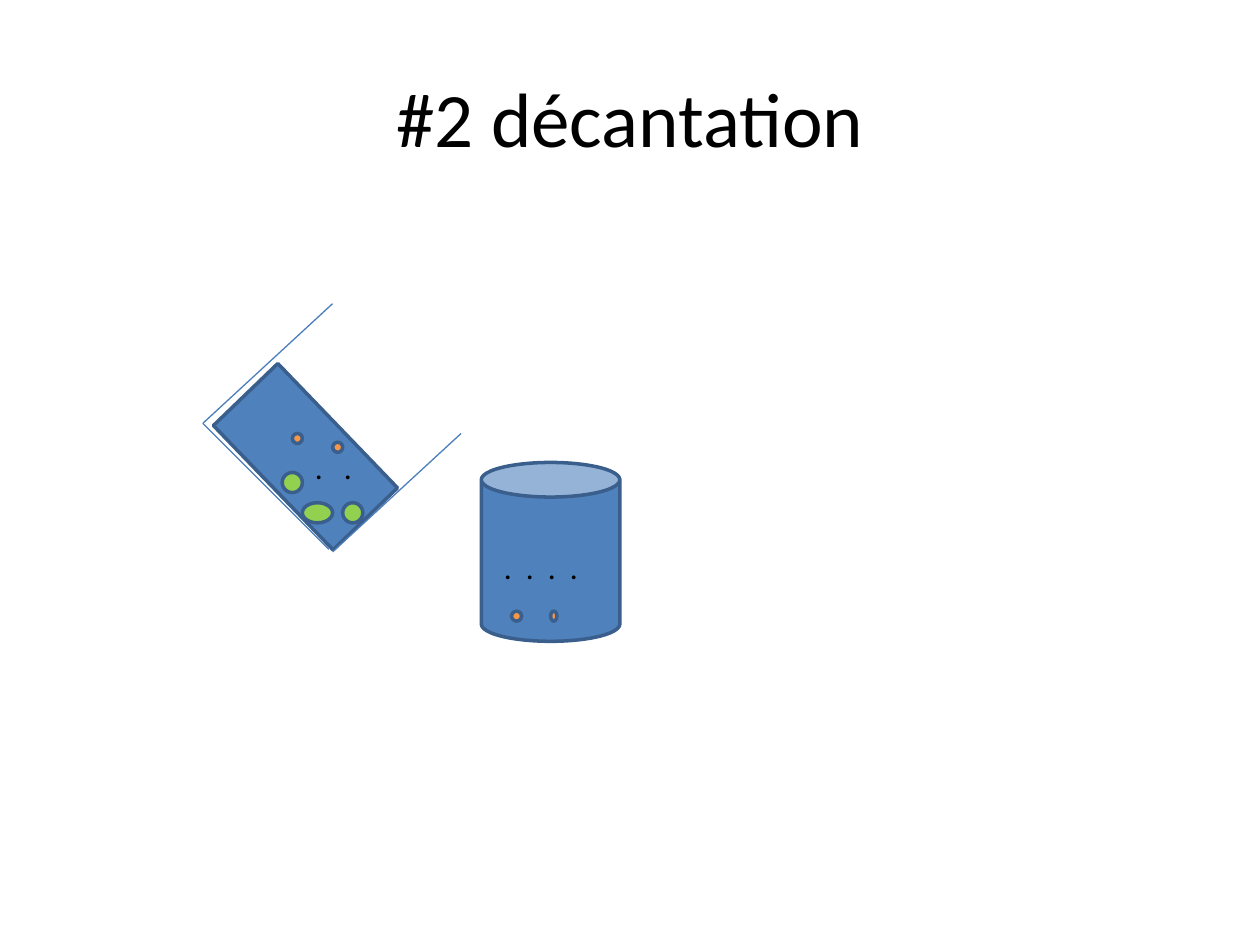
from dataclasses import dataclass
from lxml.etree import SubElement
from pptx import Presentation
from pptx.dml.color import RGBColor as RGB
from pptx.enum.shapes import MSO_CONNECTOR as Link, MSO_SHAPE as Kind
from pptx.enum.text import MSO_ANCHOR as Anchor, MSO_AUTO_SIZE as Fit, PP_ALIGN as Align
from pptx.oxml.ns import qn
from pptx.util import Inches, Pt


@dataclass
class Theme:
    font: str = "Calibri"
    head: int = 44
    body: int = 18
    ink: RGB = RGB(0, 0, 0)
    water: RGB = RGB(0x4F, 0x81, 0xBD)
    edge: RGB = RGB(0x3A, 0x5F, 0x8C)
    glass: RGB = RGB(0x4B, 0x7E, 0xBC)
    green: RGB = RGB(0x92, 0xD0, 0x50)
    amber: RGB = RGB(0xF7, 0x96, 0x46)


theme = Theme()
deck = Presentation()
deck.slide_width, deck.slide_height = Inches(10), Inches(7.5)
slide = deck.slides.add_slide(deck.slide_layouts[5])
shapes = slide.shapes


def draw(kind, box, fill):
    shape = shapes.add_shape(kind, *map(Inches, box))
    shape.shadow.inherit = False
    shape.fill.solid()
    shape.fill.fore_color.rgb = fill
    shape.line.color.rgb = theme.edge
    shape.line.width = Pt(2)
    return shape


def style(para, size):
    para.font.name = theme.font
    para.font.size = Pt(size)
    para.font.color.rgb = theme.ink


title = shapes.title
title.left, title.top, title.width, title.height = map(Inches, (0.5, 0.3, 9, 1.25))
title.text_frame.text = "#2 décantation"
title.text_frame.vertical_anchor = Anchor.MIDDLE
title.text_frame.paragraphs[0].alignment = Align.CENTER
style(title.text_frame.paragraphs[0], theme.head)

draw(Kind.CAN, (3.82, 3.67, 1.1, 1.42), theme.water)
tilted = draw(Kind.RECTANGLE, (2.07, 2.94, 0.71, 1.37), theme.water)
tilted.rotation = 316.1

for ends in [(2.64, 2.41, 1.61, 3.36), (1.61, 3.36, 2.61, 4.36), (2.64, 4.38, 3.66, 3.44)]:
    wall = shapes.add_connector(Link.STRAIGHT, *map(Inches, ends))
    wall.line.color.rgb = theme.glass
    wall.line.width = Pt(0.75)
    SubElement(wall._element.spPr, qn("a:effectLst"))

for x, y, wide in [(2.24, 3.75, 0.16), (2.4, 3.99, 0.24), (2.72, 3.99, 0.16)]:
    draw(Kind.FLOWCHART_CONNECTOR, (x, y, wide, 0.16), theme.green)

for x, y, wide in [(2.32, 3.44, 0.08), (2.64, 3.51, 0.08), (4.06, 4.85, 0.08), (4.37, 4.85, 0.05)]:
    draw(Kind.FLOWCHART_CONNECTOR, (x, y, wide, 0.08), theme.amber)

for box, dots, gap in [((2.4, 3.51, 0.79, 0.4), 2, 4), ((3.9, 4.3, 1.02, 0.4), 4, 2)]:
    frame = shapes.add_textbox(*map(Inches, box)).text_frame
    frame.word_wrap = True
    frame.auto_size = Fit.SHAPE_TO_FIT_TEXT
    para = frame.paragraphs[0]
    run = para.add_run()
    run.text = " ".join("." * dots)
    run._r.get_or_add_rPr().set("spc", str(gap * 100))
    style(para, theme.body)

deck.save("out.pptx")
